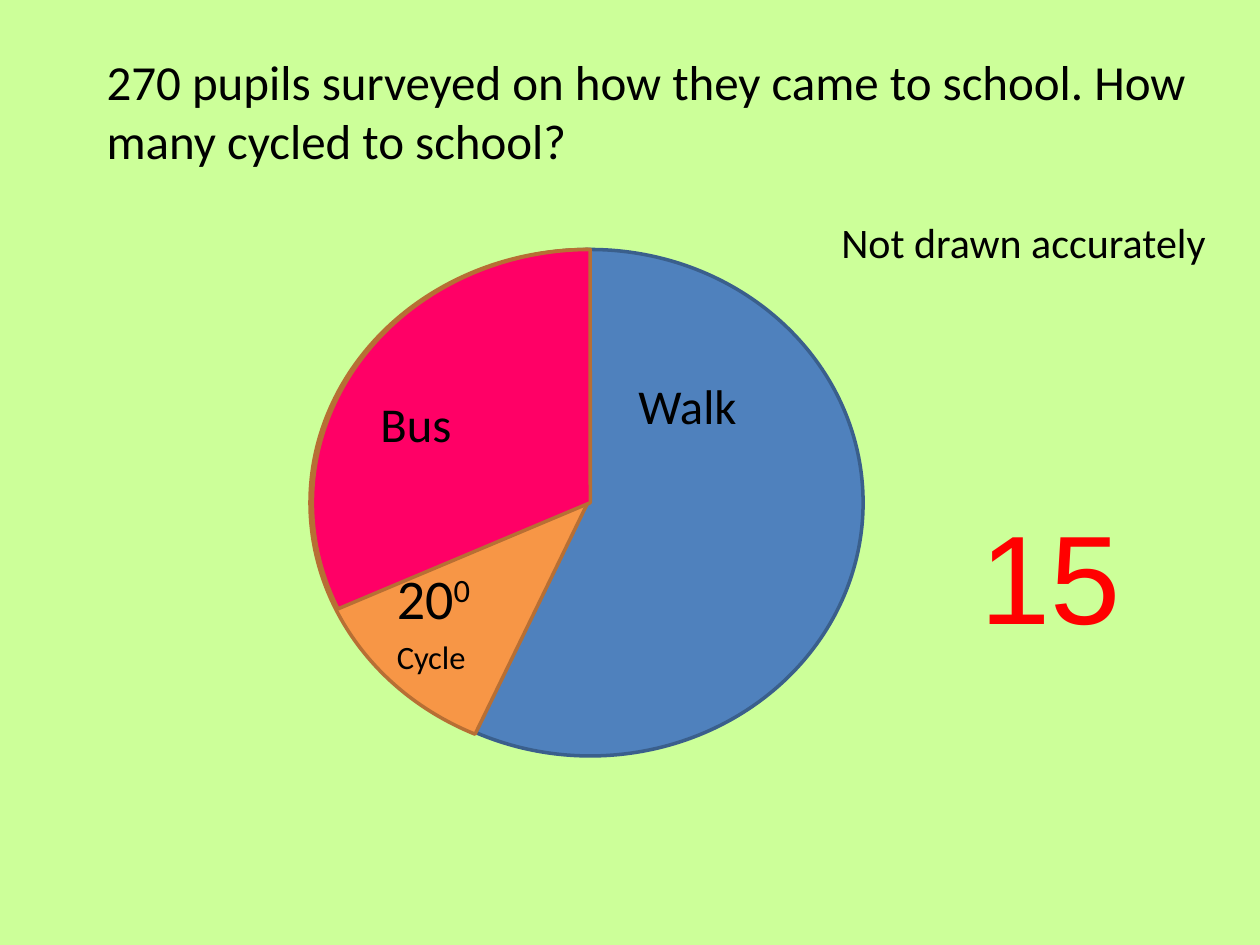
from dataclasses import dataclass

from pptx import Presentation, util as u
from pptx.dml.color import RGBColor
from pptx.enum import shapes, text


@dataclass(frozen=True)
class Theme:
    back: str = "CCFF99"
    blue: str = "4F81BD"
    navy: str = "3A5F8C"
    gold: str = "F79646"
    brown: str = "B76F34"
    pink: str = "FF0066"
    ink: str = "000000"
    red: str = "FF0000"
    face: str = "Calibri"
    sans: str = "Arial"
    note: int = 24
    title: int = 28
    angle: int = 32
    label: int = 48
    answer: int = 72
    edge: int = 2
    lift: int = 30000


THEME = Theme()
TOP, HIGH = 5.03, 10.21
NOON = 270


@dataclass(frozen=True)
class Part:
    left: float
    width: float
    fill: str
    line: str
    start: float | None = None


@dataclass(frozen=True)
class Run:
    words: str
    up: bool = False


@dataclass(frozen=True)
class Label:
    left: float
    top: float
    width: float
    height: float
    lines: tuple[tuple[Run, ...], ...]
    size: int
    face: str = THEME.face
    color: str = THEME.ink


PARTS = (
    Part(6.4, 11, THEME.blue, THEME.navy),
    Part(6.25, 11.2, THEME.gold, THEME.brown, 115.96),
    Part(6.3, 11.2, THEME.pink, THEME.brown, 157.17),
)

LABELS = (
    Label(7.75, 11.23, 4.09, 3,
          ((Run("20"), Run("0", True)), (Run("Cycle", True),)), THEME.angle),
    Label(12.62, 7.24, 4.09, 2.31, ((Run("Walk", True),),), THEME.label),
    Label(7.42, 7.62, 4.09, 2.31, ((Run("Bus", True),),), THEME.label),
    Label(1.9, 0.91, 22.4, 2.64,
          ((Run("270 pupils surveyed on how they came to school. "
                "How many cycled to school?"),),), THEME.title),
    Label(16.71, 4.24, 8.18, 2.64,
          ((Run("Not drawn accurately"),),), THEME.note),
    Label(19.51, 9.93, 4.39, 3.33,
          ((Run("15"),),), THEME.answer, THEME.sans, THEME.red),
)


def rgb(code: str) -> RGBColor:
    return RGBColor.from_string(code)


def draw_part(slide, part: Part) -> None:
    kind = shapes.MSO_SHAPE.OVAL if part.start is None else shapes.MSO_SHAPE.PIE
    shape = slide.shapes.add_shape(
        kind, u.Cm(part.left), u.Cm(TOP), u.Cm(part.width), u.Cm(HIGH))
    if part.start is not None:
        for spot, angle in enumerate((part.start, NOON)):
            shape.adjustments[spot] = angle * 0.6
    shape.shadow.inherit = False
    shape.fill.solid()
    shape.fill.fore_color.rgb = rgb(part.fill)
    shape.line.color.rgb = rgb(part.line)
    shape.line.width = u.Pt(THEME.edge)


def draw_label(slide, label: Label) -> None:
    box = slide.shapes.add_textbox(
        u.Cm(label.left), u.Cm(label.top), u.Cm(label.width), u.Cm(label.height))
    frame = box.text_frame
    frame.word_wrap = True
    frame.auto_size = text.MSO_AUTO_SIZE.SHAPE_TO_FIT_TEXT
    for row, line in enumerate(label.lines):
        para = frame.add_paragraph() if row else frame.paragraphs[0]
        para.font.size = u.Pt(label.size)
        para.font.name = label.face
        para.font.color.rgb = rgb(label.color)
        for item in line:
            run = para.add_run()
            run.text = item.words
            if item.up:
                run._r.get_or_add_rPr().set("baseline", str(THEME.lift))


def main() -> None:
    deck = Presentation()
    deck.slide_width, deck.slide_height = u.Cm(25.4), u.Cm(19.05)
    slide = deck.slides.add_slide(deck.slide_layouts[6])
    slide.background.fill.solid()
    slide.background.fill.fore_color.rgb = rgb(THEME.back)
    for part in PARTS:
        draw_part(slide, part)
    for label in LABELS:
        draw_label(slide, label)
    deck.save("out.pptx")


if __name__ == "__main__":
    main()
